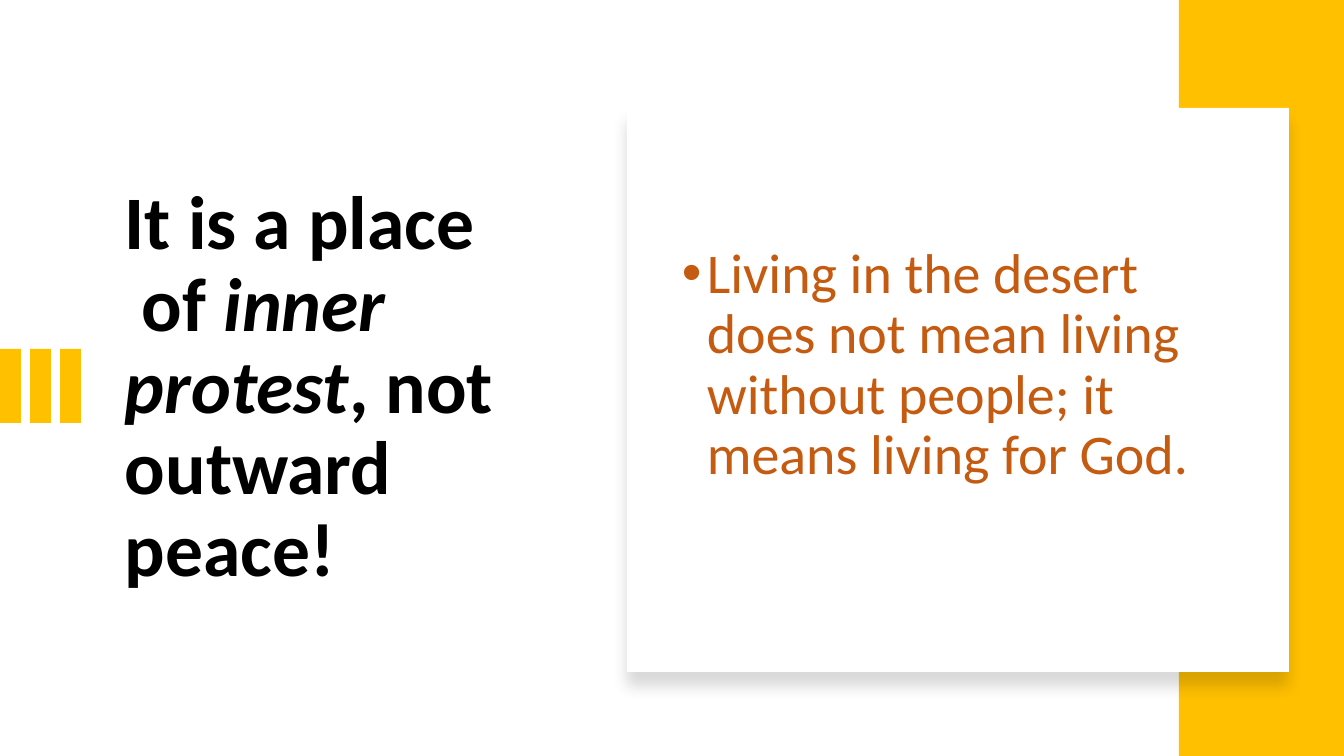
from dataclasses import dataclass

from pptx import Presentation, oxml, util as u
from pptx.dml.color import RGBColor
from pptx.enum import shapes, text
from pptx.oxml import ns

EMU_PER_PX = 12192000 / 1344


@dataclass(frozen=True)
class Theme:
    font: str = "Calibri"
    accent: str = "FFC000"
    panel: str = "FFFFFF"
    heading: str = "000000"
    body: str = "C55A11"
    heading_size: int = 54
    body_size: int = 40
    line_spacing: float = 0.9


THEME = Theme()


def px(length):
    return u.Emu(round(length * EMU_PER_PX))


def add_rectangle(container, left, top, width, height, color):
    shape = container.add_shape(
        shapes.MSO_SHAPE.RECTANGLE, px(left), px(top), px(width), px(height)
    )
    shape.shadow.inherit = False
    shape.fill.solid()
    shape.fill.fore_color.rgb = RGBColor.from_string(color)
    shape.line.fill.background()
    return shape


def add_soft_shadow(shape):
    effects = shape._element.spPr.find(ns.qn("a:effectLst"))
    effects.append(oxml.parse_xml(
        f'<a:outerShdw {ns.nsdecls("a")} blurRad="{u.Pt(11)}" dist="{u.Pt(10)}" '
        'dir="5400000" algn="t" rotWithShape="0">'
        '<a:srgbClr val="000000"><a:alpha val="15000"/></a:srgbClr>'
        '</a:outerShdw>'
    ))


def add_text(slide, left, top, width, height, parts, size, color, bold=False):
    shape = slide.shapes.add_textbox(px(left), px(top), px(width), px(height))
    frame = shape.text_frame
    frame.word_wrap = True
    frame.vertical_anchor = text.MSO_ANCHOR.MIDDLE
    paragraph = frame.paragraphs[0]
    paragraph.line_spacing = THEME.line_spacing
    paragraph.text = parts[0]
    for part in parts[1:]:
        paragraph.add_run().text = part
    for run in paragraph.runs:
        run.font.name = THEME.font
        run.font.size = u.Pt(size)
        run.font.bold = bold
        run.font.color.rgb = RGBColor.from_string(color)
    return shape


def add_bullet(paragraph, indent):
    properties = paragraph._p.get_or_add_pPr()
    properties.set("marL", str(px(indent)))
    properties.set("indent", str(-px(indent)))
    properties.append(oxml.parse_xml(
        f'<a:buFont {ns.nsdecls("a")} typeface="Arial"/>'
    ))
    properties.append(oxml.parse_xml(f'<a:buChar {ns.nsdecls("a")} char="•"/>'))


def add_heading(slide):
    parts = ["It is a place\v of ", "inner protest", ", not outward peace!"]
    heading = add_text(slide, 115, 147, 429, 483, parts,
                       THEME.heading_size, THEME.heading, bold=True)
    for run in heading.text_frame.paragraphs[0].runs:
        run.font.italic = run.text == parts[1]


def add_accent_bars(slide):
    bars = slide.shapes.add_group_shape()
    for index in range(3):
        add_rectangle(bars.shapes, 30 * index, 349, 21, 74, THEME.accent)


def add_body(slide):
    parts = ["Living in the desert does not mean living without people; "
             "it means living for God."]
    body = add_text(slide, 672, 147, 580, 483, parts, THEME.body_size, THEME.body)
    body.text_frame.margin_bottom = px(50)
    paragraph = body.text_frame.paragraphs[0]
    paragraph.space_before = u.Pt(10)
    add_bullet(paragraph, 25)


def main():
    presentation = Presentation()
    presentation.slide_width = px(1344)
    presentation.slide_height = px(756)
    slide = presentation.slides.add_slide(presentation.slide_layouts[6])
    add_heading(slide)
    add_accent_bars(slide)
    add_rectangle(slide.shapes, 1179, 0, 165, 756, THEME.accent)
    panel = add_rectangle(slide.shapes, 627, 108, 662, 564, THEME.panel)
    add_soft_shadow(panel)
    add_body(slide)
    presentation.save("out.pptx")


if __name__ == "__main__":
    main()
